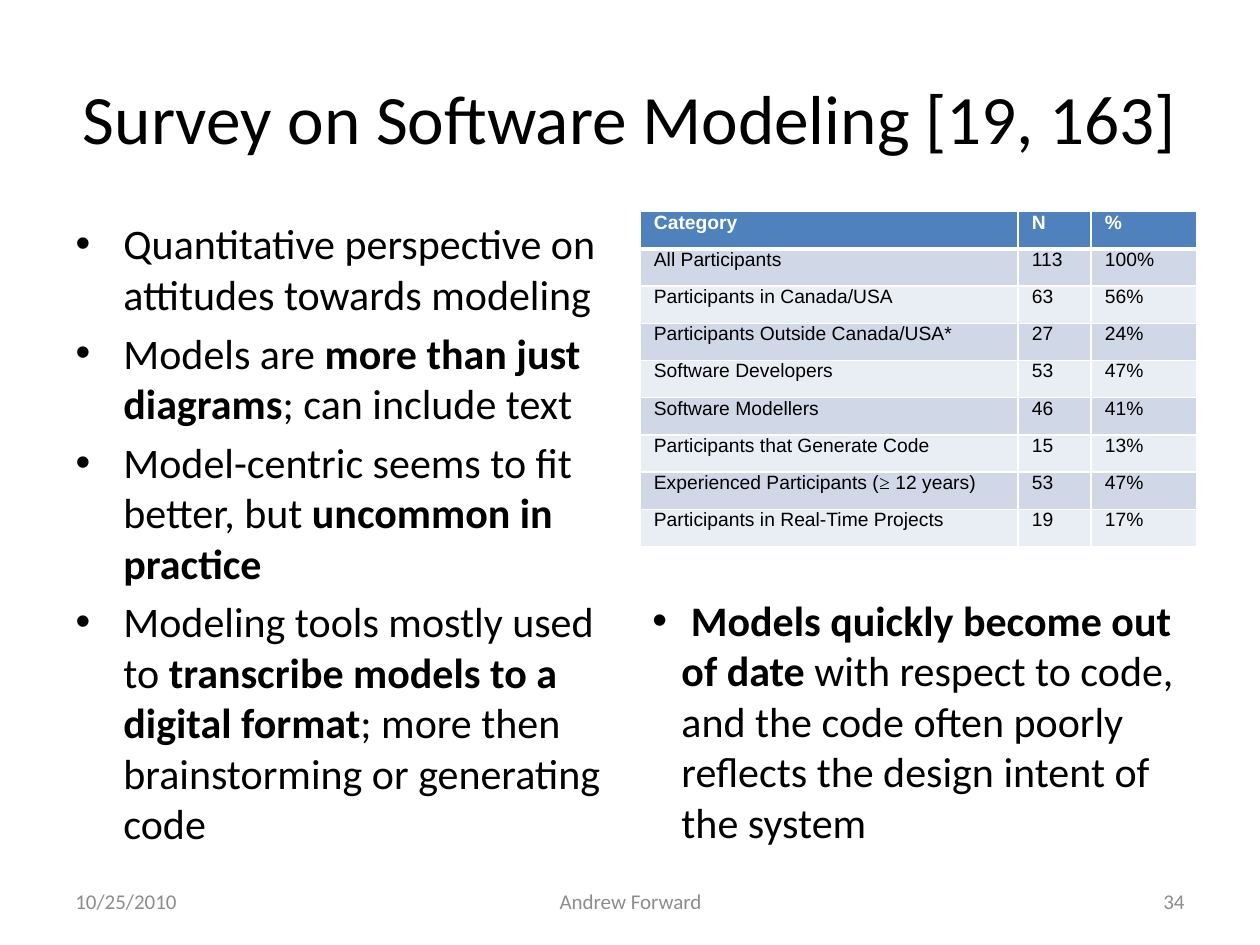
from lxml import etree
from pptx import Presentation
from pptx.dml.color import RGBColor
from pptx.enum.text import MSO_ANCHOR, MSO_AUTO_SIZE, PP_ALIGN
from pptx.oxml.ns import qn
from pptx.util import Inches, Pt


def color(value):
    return RGBColor.from_string(value)


def add_runs(paragraph, runs, size, font_name="Calibri", fill="000000"):
    """Add (text, bold) or (text, bold, font name) runs."""
    for text, bold, *other_font in runs:
        run = paragraph.add_run()
        run.text = text
        run.font.size = Pt(size)
        run.font.bold = bold
        run.font.name = other_font[0] if other_font else font_name
        run.font.color.rgb = color(fill)


presentation = Presentation()
presentation.slide_width, presentation.slide_height = Inches(10), Inches(7.5)
slide = presentation.slides.add_slide(presentation.slide_layouts[1])

# Title
title = slide.shapes.title
title.left, title.top, title.width, title.height = map(Inches, (0.5, 0.3, 9, 1.25))
title.text_frame.auto_size = MSO_AUTO_SIZE.NONE
add_runs(title.text_frame.paragraphs[0], [("Survey on Software Modeling [19, 163]", False)], 39.6)

# Findings on the left
findings = [
    [("Quantitative perspective on attitudes towards modeling", False)],
    [("Models are ", False), ("more than just diagrams", True), ("; can include text", False)],
    [("Model-centric seems to fit better, but ", False), ("uncommon in practice", True)],
    [("Modeling tools mostly used to ", False),
     ("transcribe models to a digital format", True),
     ("; more then brainstorming or generating code", False)],
]
body = slide.placeholders[1]
body.left, body.top, body.width, body.height = map(Inches, (0.5, 1.68, 4.58, 5.02))
body.text_frame.auto_size = MSO_AUTO_SIZE.NONE
for index, runs in enumerate(findings):
    paragraph = body.text_frame.add_paragraph() if index else body.text_frame.paragraphs[0]
    properties = paragraph._p.get_or_add_pPr()
    properties.set("marL", str(Inches(0.38)))
    properties.set("indent", str(Inches(-0.38)))
    add_runs(paragraph, runs, 24)

# Participant table
rows = [
    ("Category", "N", "%"),
    ("All Participants", "113", "100%"),
    ("Participants in Canada/USA", "63", "56%"),
    ("Participants Outside Canada/USA*", "27", "24%"),
    ("Software Developers", "53", "47%"),
    ("Software Modellers", "46", "41%"),
    ("Participants that Generate Code", "15", "13%"),
    ("Experienced Participants (≥ 12 years)", "53", "47%"),
    ("Participants in Real-Time Projects", "19", "17%"),
]
table = slide.shapes.add_table(
    len(rows), 3, Inches(5.08), Inches(1.68), Inches(4.42), Inches(2.66)).table
for column, width in zip(table.columns, (3, 0.58, 0.84)):
    column.width = Inches(width)

for row_index, row in enumerate(rows):
    is_header = row_index == 0
    cell_fill = "4F81BD" if is_header else ("E9EDF4", "D0D8E8")[row_index % 2]
    for column_index, text in enumerate(row):
        cell = table.cell(row_index, column_index)
        cell.margin_left = cell.margin_right = Inches(0.07)
        cell.margin_top = cell.margin_bottom = 0
        cell.fill.solid()
        cell.fill.fore_color.rgb = color(cell_fill)

        paragraph = cell.text_frame.paragraphs[0]
        paragraph._p.get_or_add_pPr().set("marL", str(Inches(0.04)))
        before, symbol, after = text.partition("≥")
        runs = [(before, is_header)]
        if symbol:
            runs += [(symbol, False, "Times New Roman"), (after, False)]
        add_runs(paragraph, runs, 11, "Arial", "FFFFFF" if is_header else "000000")

        # White borders, thicker below the header
        thick_side = {0: "lnB", 1: "lnT"}.get(row_index)
        cell_properties = cell._tc.get_or_add_tcPr()
        for position, side in enumerate(("lnL", "lnR", "lnT", "lnB")):
            border = etree.Element(qn("a:" + side), w=str(Pt(3 if side == thick_side else 1)))
            solid = etree.SubElement(border, qn("a:solidFill"))
            etree.SubElement(solid, qn("a:srgbClr"), val="FFFFFF")
            cell_properties.insert(position, border)

# Footer: date, author and slide number
footers = [
    ("10/25/2010", 0.5, 2.33, PP_ALIGN.LEFT),
    ("Andrew Forward", 3.42, 3.17, PP_ALIGN.CENTER),
    ("34", 7.17, 2.33, PP_ALIGN.RIGHT),
]
for text, left, width, alignment in footers:
    footer = slide.shapes.add_textbox(Inches(left), Inches(6.95), Inches(width), Inches(0.4))
    footer.text_frame.word_wrap = True
    footer.text_frame.vertical_anchor = MSO_ANCHOR.MIDDLE
    paragraph = footer.text_frame.paragraphs[0]
    paragraph.alignment = alignment
    add_runs(paragraph, [(text, False)], 12, fill="8C8C8C")

# Finding below the table
note = slide.shapes.add_textbox(Inches(5.08), Inches(4.67), Inches(4.42), Inches(2.1))
note.text_frame.word_wrap = True
note.text_frame.auto_size = MSO_AUTO_SIZE.SHAPE_TO_FIT_TEXT
paragraph = note.text_frame.paragraphs[0]
properties = paragraph._p.get_or_add_pPr()
properties.set("marL", str(Inches(0.23)))
properties.set("indent", str(Inches(-0.23)))
etree.SubElement(properties, qn("a:buFont"), typeface="Arial")
etree.SubElement(properties, qn("a:buChar"), char="•")
add_runs(paragraph, [
    (" ", False),
    ("Models quickly become out of date", True),
    (" with respect to code, and the code often poorly reflects"
     " the design intent of the system", False),
], 24)

presentation.save("out.pptx")
